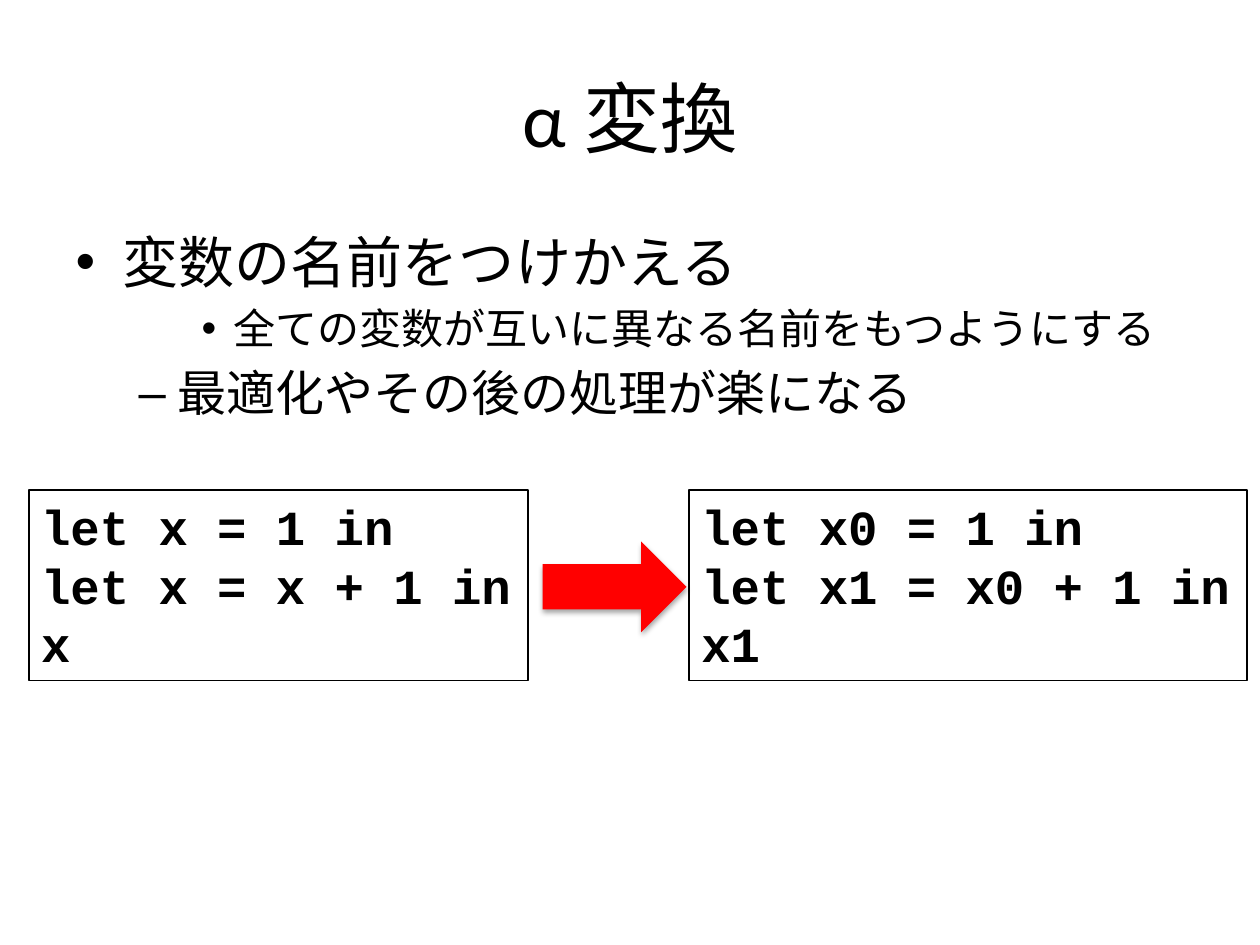
from pptx import Presentation
from pptx.dml.color import RGBColor
from pptx.enum.shapes import MSO_SHAPE as Shape
from pptx.enum.text import MSO_ANCHOR as Anchor, MSO_AUTO_SIZE as AutoSize, PP_ALIGN as Align
from pptx.util import Cm, Pt

TITLE = "α 変換"
# (outline level, text)
POINTS = [
    (0, "変数の名前をつけかえる"),
    (2, "全ての変数が互いに異なる名前をもつようにする"),
    (1, "最適化やその後の処理が楽になる"),
]
POINT_SIZES = [32, 28, 24]
# (left and width in cm, lines of code)
PROGRAMS = [
    (0.58, 10.06, ["let x = 1 in", "let x = x + 1 in", "x"]),
    (13.89, 11.25, ["let x0 = 1 in", "let x1 = x0 + 1 in", "x1"]),
]
CODE_TOP, CODE_HEIGHT = 9.88, 3.84
ARROW_WIDTH, ARROW_HEIGHT = 2.9, 1.83
ARROW_GAP = 0.05
BLACK, RED = "000000", "FF0000"


def color(hex_code):
    return RGBColor.from_string(hex_code)


def place(shape, left, top, width, height):
    shape.left, shape.top = Cm(left), Cm(top)
    shape.width, shape.height = Cm(width), Cm(height)


def format_para(para, size, font="Calibri", bold=None):
    for span in para.runs:
        span.font.name = font
        span.font.size = Pt(size)
        span.font.bold = bold
        span.font.color.rgb = color(BLACK)


def add_code(page, left, width, lines):
    box = page.shapes.add_textbox(Cm(left), Cm(CODE_TOP), Cm(width), Cm(CODE_HEIGHT))
    box.line.color.rgb = color(BLACK)
    box.line.width = Pt(1)
    frame = box.text_frame
    frame.text = "\n".join(lines)
    frame.word_wrap = False
    frame.auto_size = AutoSize.SHAPE_TO_FIT_TEXT
    for para in frame.paragraphs:
        format_para(para, 28, "Courier New", True)


def main():
    deck = Presentation()
    deck.slide_width, deck.slide_height = Cm(25.4), Cm(19.05)
    page = deck.slides.add_slide(deck.slide_layouts[1])

    # Title
    title = page.shapes.title
    place(title, 1.27, 0.76, 22.86, 3.18)
    title.text_frame.text = TITLE
    title.text_frame.vertical_anchor = Anchor.MIDDLE
    heading = title.text_frame.paragraphs[0]
    heading.alignment = Align.CENTER
    format_para(heading, 44)

    # Points, with the bullets and indents of the template's levels
    body = page.placeholders[1]
    place(body, 1.27, 4.45, 22.86, 12.57)
    body.text_frame.text = "\n".join(text for _, text in POINTS)
    for para, (level, _) in zip(body.text_frame.paragraphs, POINTS):
        para.level = level
        format_para(para, POINT_SIZES[level])

    # Code before and after renaming
    for left, width, lines in PROGRAMS:
        add_code(page, left, width, lines)

    # Arrow up to the second program, with the theme's soft shadow
    arrow_left = PROGRAMS[1][0] - ARROW_GAP - ARROW_WIDTH
    arrow_top = CODE_TOP + (CODE_HEIGHT - ARROW_HEIGHT) / 2 + 0.03
    arrow = page.shapes.add_shape(
        Shape.RIGHT_ARROW, Cm(arrow_left), Cm(arrow_top), Cm(ARROW_WIDTH), Cm(ARROW_HEIGHT))
    arrow.fill.solid()
    arrow.fill.fore_color.rgb = color(RED)
    arrow.line.fill.background()

    deck.save("out.pptx")


if __name__ == "__main__":
    main()
